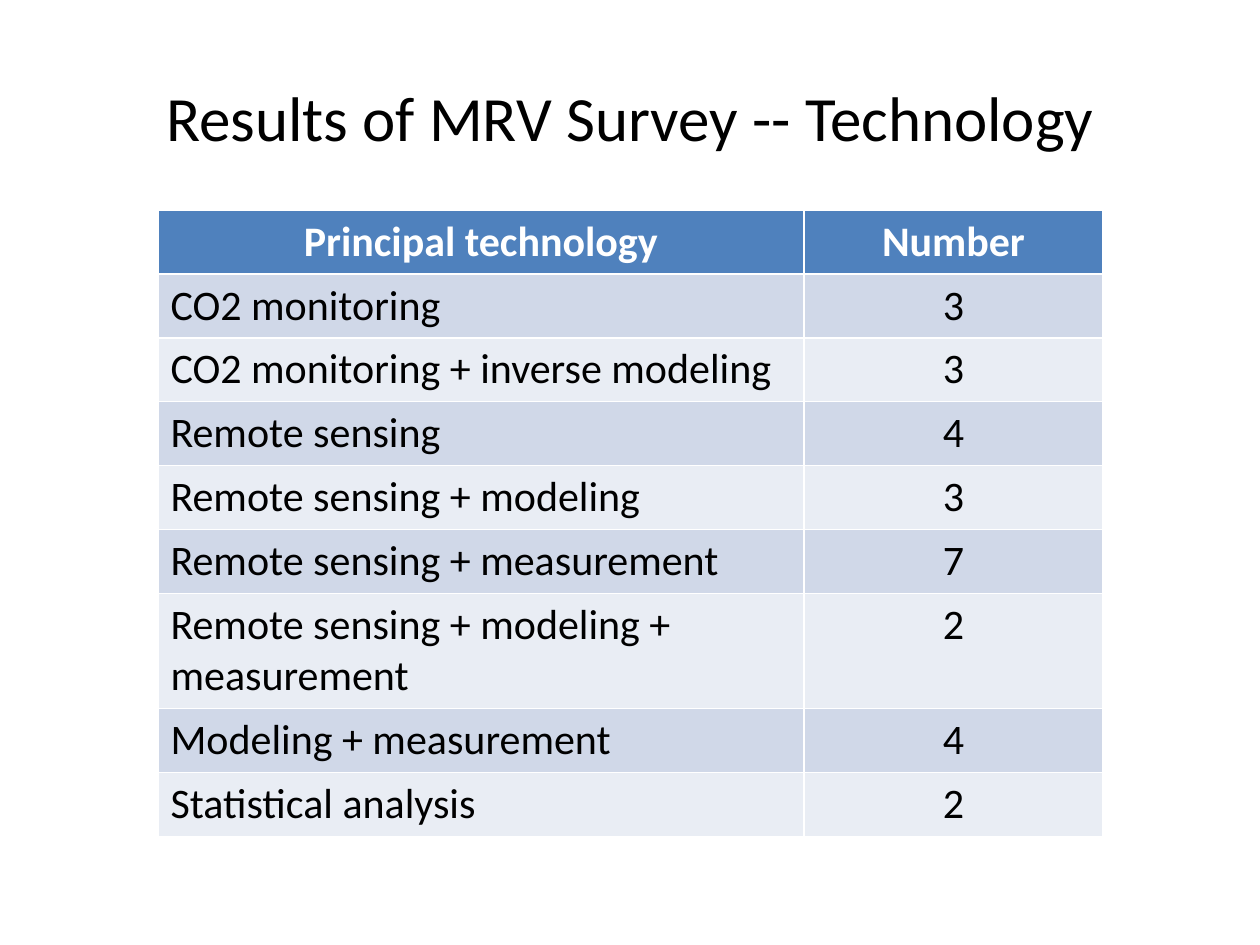
"""Build the survey slide that counts MRV projects by principal technology."""
import dataclasses
import typing

import pptx
import pptx.dml.color
import pptx.enum.text
import pptx.slide
import pptx.table
import pptx.util

PX_PER_INCH = 126
CENTER = pptx.enum.text.PP_ALIGN.CENTER
LEFT = pptx.enum.text.PP_ALIGN.LEFT


@dataclasses.dataclass(frozen=True)
class Theme:
    font: str = "Calibri"
    title_size: int = 36
    table_size: int = 24
    ink: str = "000000"
    header_ink: str = "FFFFFF"
    header_fill: str = "4F81BD"
    bands: tuple[str, str] = ("D0D8E8", "E9EDF4")


class Finding(typing.NamedTuple):
    technology: str
    number: int


class Box(typing.NamedTuple):
    left: int
    top: int
    width: int
    height: int


THEME = Theme()
TITLE_BOX = Box(63, 38, 1134, 157)
TABLE_LEFT, TABLE_TOP = 158, 210
COLUMN_WIDTHS = (646, 299)
ROW_HEIGHT = 52
HEADINGS = ("Principal technology", "Number")
FINDINGS = (
    Finding("CO2 monitoring", 3),
    Finding("CO2 monitoring + inverse modeling", 3),
    Finding("Remote sensing", 4),
    Finding("Remote sensing + modeling", 3),
    Finding("Remote sensing + measurement", 7),
    Finding("Remote sensing + modeling + measurement", 2),
    Finding("Modeling + measurement", 4),
    Finding("Statistical analysis", 2),
)


def px(length: int) -> pptx.util.Emu:
    return pptx.util.Emu(round(length * pptx.util.Inches(1) / PX_PER_INCH))


def rgb(color: str) -> pptx.dml.color.RGBColor:
    return pptx.dml.color.RGBColor.from_string(color)


def write(frame, text: str, size: int, color: str, align, bold: bool = False) -> None:
    frame.text = text
    paragraph = frame.paragraphs[0]
    paragraph.alignment = align
    font = paragraph.runs[0].font
    font.name, font.size, font.bold = THEME.font, pptx.util.Pt(size), bold
    font.color.rgb = rgb(color)


def draw_title(slide: pptx.slide.Slide, text: str) -> None:
    title = slide.shapes.title
    title.left, title.top, title.width, title.height = map(px, TITLE_BOX)
    title.text_frame.vertical_anchor = pptx.enum.text.MSO_ANCHOR.MIDDLE
    write(title.text_frame, text, THEME.title_size, THEME.ink, CENTER)


def fill_row(table: pptx.table.Table, row: int, texts: typing.Iterable) -> None:
    is_header = row == 0
    fill = THEME.header_fill if is_header else THEME.bands[(row - 1) % 2]
    ink = THEME.header_ink if is_header else THEME.ink
    table.rows[row].height = px(ROW_HEIGHT)
    for column, text in enumerate(texts):
        cell = table.cell(row, column)
        cell.fill.solid()
        cell.fill.fore_color.rgb = rgb(fill)
        align = CENTER if is_header or column == 1 else LEFT
        write(cell.text_frame, str(text), THEME.table_size, ink, align, is_header)


def draw_findings(slide: pptx.slide.Slide) -> None:
    rows = (HEADINGS, *FINDINGS)
    box = Box(TABLE_LEFT, TABLE_TOP, sum(COLUMN_WIDTHS), ROW_HEIGHT * len(rows))
    table = slide.shapes.add_table(len(rows), len(HEADINGS), *map(px, box)).table
    for column, width in zip(table.columns, COLUMN_WIDTHS):
        column.width = px(width)
    for row, texts in enumerate(rows):
        fill_row(table, row, texts)


def main() -> None:
    deck = pptx.Presentation()
    deck.slide_width, deck.slide_height = px(1260), px(945)
    slide = deck.slides.add_slide(deck.slide_layouts.get_by_name("Title Only"))
    draw_title(slide, "Results of MRV Survey -- Technology")
    draw_findings(slide)
    deck.save("out.pptx")


if __name__ == "__main__":
    main()
